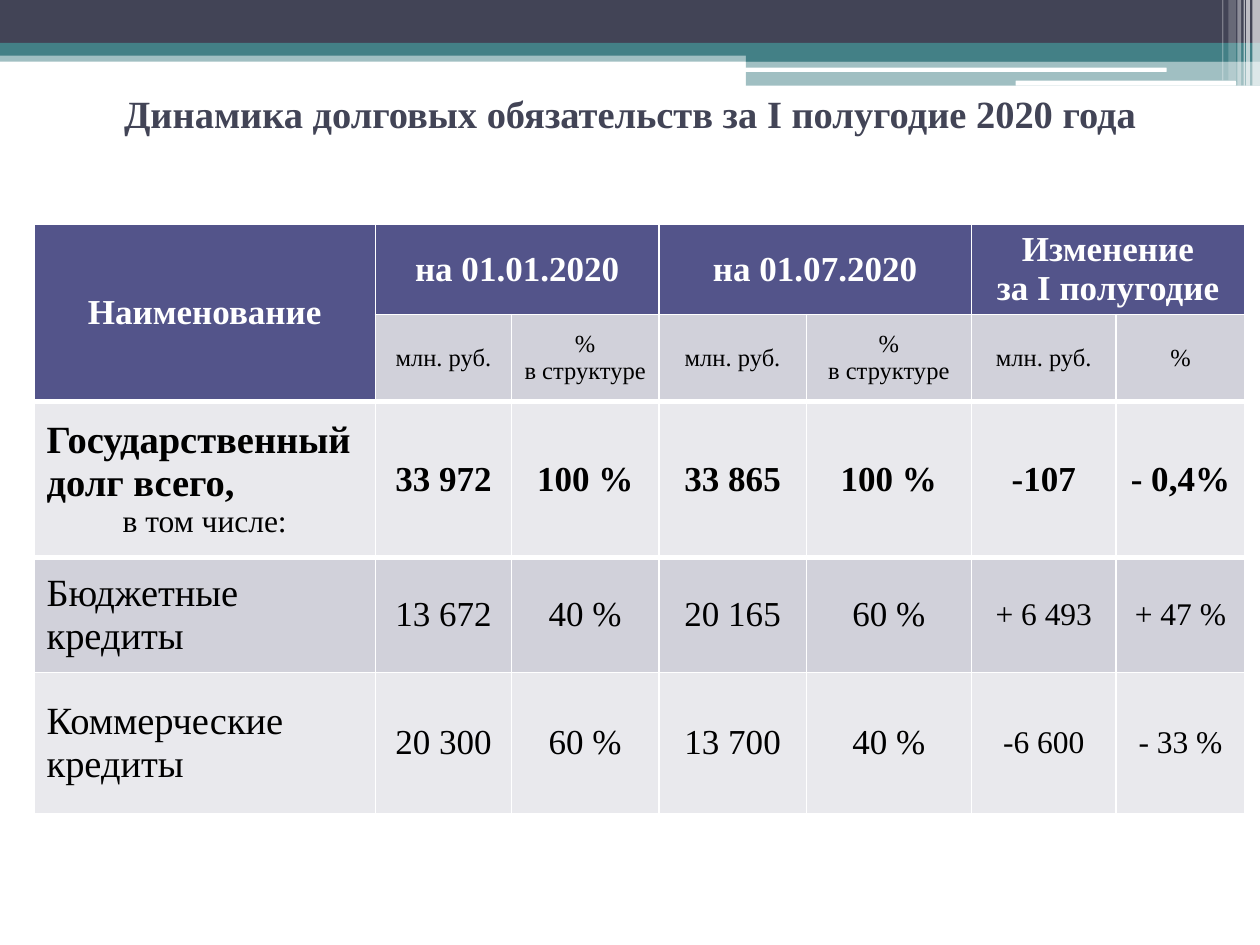
from dataclasses import dataclass
from typing import NamedTuple

from lxml.etree import SubElement
from pptx import Presentation
from pptx.dml.color import RGBColor
from pptx.enum.shapes import MSO_SHAPE as Shape
from pptx.enum.text import MSO_ANCHOR as Anchor, PP_ALIGN as Align
from pptx.oxml.ns import qn
from pptx.util import Inches, Pt


@dataclass(frozen=True)
class Theme:
    font: str = "Times New Roman"
    dark: str = "424456"
    teal: str = "438086"
    white: str = "FFFFFF"
    black: str = "000000"
    header: str = "53548A"
    band: str = "D1D1DA"
    pale: str = "E9E9ED"
    large: int = 22
    medium: int = 20
    small: int = 18
    unit: int = 14
    thin: float = 1
    thick: float = 3


class Box(NamedTuple):
    """A region in inches."""
    x: float
    y: float
    w: float
    h: float


T = Theme()
SLIDE = Box(0, 0, 10, 7.5)

# Percent of the banner: left, top, width, height; colour, opacity
STRIPES = [
    (0, 59, 100, 13, T.teal, 50),
    (0, 0, 100, 50, T.dark, 100),
    (0, 50, 100, 15, T.teal, 100),
    (59.2, 57, 40.8, 15, T.teal, 100),
    (59.2, 71, 40.8, 29, T.teal, 50),
]
SLOTS = [(59.1, 79, 33.5, 5, T.white, 100), (80.6, 94, 17.5, 6, T.white, 100)]
GLINTS = [
    (99.4, 0, 0.6, 100, T.white, 65),
    (98.9, 0, 0.3, 100, T.white, 65),
    (98.7, 0, 0.1, 100, T.white, 60),
    (98.2, 0, 0.3, 100, T.white, 40),
    (97.5, 0, 0.6, 94, T.white, 20),
    (97, 0, 0.1, 94, T.white, 30),
]

COLUMNS = [2.71, 1.08, 1.17, 1.17, 1.31, 1.15, 1.02]
ROWS = [0.71, 0.69, 1.24, 0.91, 1.12]
GROUPS = ["на 01.01.2020", "на 01.07.2020", "Изменение\nза I полугодие"]
UNITS = ["млн. руб.", "%\nв структуре"] * 2 + ["млн. руб.", "%"]
TOTAL = ["33 972", "100 %", "33 865", "100 %", "-107", "- 0,4%"]
LOANS = [
    ("Бюджетные кредиты", T.band,
     ["13 672", "40 %", "20 165", "60 %", "+ 6 493", "+ 47 %"]),
    ("Коммерческие кредиты", T.pale,
     ["20 300", "60 %", "13 700", "40 %", "-6 600", "- 33 %"]),
]


def rgb(color):
    return RGBColor.from_string(color)


def style(p, size, color, bold=False, align=Align.CENTER):
    p.alignment = align
    f = p.font
    f.name, f.size, f.bold = T.font, Pt(size), bold
    f.color.rgb = rgb(color)


def add_strips(slide, box, strips, kind=Shape.RECTANGLE):
    for x, y, w, h, color, opacity in strips:
        sp = slide.shapes.add_shape(
            kind,
            Inches(box.x + box.w * x / 100), Inches(box.y + box.h * y / 100),
            Inches(box.w * w / 100), Inches(box.h * h / 100))
        sp.shadow.inherit = False
        sp.line.fill.background()
        sp.fill.solid()
        sp.fill.fore_color.rgb = rgb(color)
        if opacity < 100:
            clr = sp.fill._xPr.find(qn("a:solidFill"))[0]
            SubElement(clr, qn("a:alpha"), val=str(opacity * 1000))


def add_banner(slide, box):
    add_strips(slide, box, STRIPES)
    add_strips(slide, box, SLOTS, Shape.ROUNDED_RECTANGLE)
    add_strips(slide, box, GLINTS)


def add_title(slide, box, text):
    title = slide.shapes.title
    title.left, title.top, title.width, title.height = map(Inches, box)
    tf = title.text_frame
    tf.text = text
    tf.vertical_anchor = Anchor.MIDDLE
    style(tf.paragraphs[0], T.large, T.dark, bold=True)


def set_borders(cell, bottom=T.thin):
    """White rules on all sides, placed before the fill as the schema asks."""
    tcPr = cell._tc.get_or_add_tcPr()
    widths = {"lnL": T.thin, "lnR": T.thin, "lnT": T.thin, "lnB": bottom}
    for i, (tag, width) in enumerate(widths.items()):
        ln = SubElement(tcPr, qn(f"a:{tag}"), w=str(Pt(width)))
        fill = SubElement(ln, qn("a:solidFill"))
        SubElement(fill, qn("a:srgbClr"), val=T.white)
        tcPr.insert(i, ln)


def fill_cell(cell, text, fill, size, color=T.black, bold=False,
              align=Align.CENTER, bottom=T.thin):
    cell.text = text
    cell.vertical_anchor = Anchor.MIDDLE
    cell.fill.solid()
    cell.fill.fore_color.rgb = rgb(fill)
    for p in cell.text_frame.paragraphs:
        style(p, size, color, bold, align)
    set_borders(cell, bottom)


def add_header(table):
    head = dict(fill=T.header, size=T.medium, color=T.white, bold=True)
    table.cell(0, 0).merge(table.cell(1, 0))
    fill_cell(table.cell(0, 0), "Наименование", bottom=T.thick, **head)
    set_borders(table.cell(1, 0), T.thick)
    for i, group in enumerate(GROUPS):
        col = 1 + 2 * i
        table.cell(0, col).merge(table.cell(0, col + 1))
        fill_cell(table.cell(0, col), group, **head)
    for col, unit in enumerate(UNITS, 1):
        fill_cell(table.cell(1, col), unit, T.band, T.unit, bottom=T.thick)


def add_body(table):
    name = table.cell(2, 0)
    fill_cell(name, "Государственный долг всего,\nв том числе:", T.pale,
              T.large, bold=True, align=Align.LEFT, bottom=T.thick)
    style(name.text_frame.paragraphs[1], T.small, T.black)
    for col, value in enumerate(TOTAL, 1):
        fill_cell(table.cell(2, col), value, T.pale, T.medium, bold=True,
                  bottom=T.thick)
    for row, (loan, fill, values) in enumerate(LOANS, 3):
        fill_cell(table.cell(row, 0), loan, fill, T.large, align=Align.LEFT)
        for col, value in enumerate(values, 1):
            size = T.medium if col < 5 else T.small
            fill_cell(table.cell(row, col), value, fill, size)


def add_debt_table(slide, box):
    table = slide.shapes.add_table(
        len(ROWS), len(COLUMNS), *map(Inches, box)).table
    table.first_row = table.horz_banding = False
    for column, share in zip(table.columns, COLUMNS):
        column.width = Inches(box.w * share / sum(COLUMNS))
    for row, share in zip(table.rows, ROWS):
        row.height = Inches(box.h * share / sum(ROWS))
    add_header(table)
    add_body(table)


def main():
    prs = Presentation()
    prs.slide_width, prs.slide_height = Inches(SLIDE.w), Inches(SLIDE.h)
    slide = prs.slides.add_slide(prs.slide_layouts[5])
    add_banner(slide, Box(0, 0, SLIDE.w, 0.68))
    add_title(slide, Box(0, 0.55, SLIDE.w, 0.7),
              "Динамика долговых обязательств за I полугодие 2020 года")
    add_debt_table(slide, Box(0.27, 1.78, 9.61, 4.67))
    prs.save("out.pptx")


if __name__ == "__main__":
    main()
